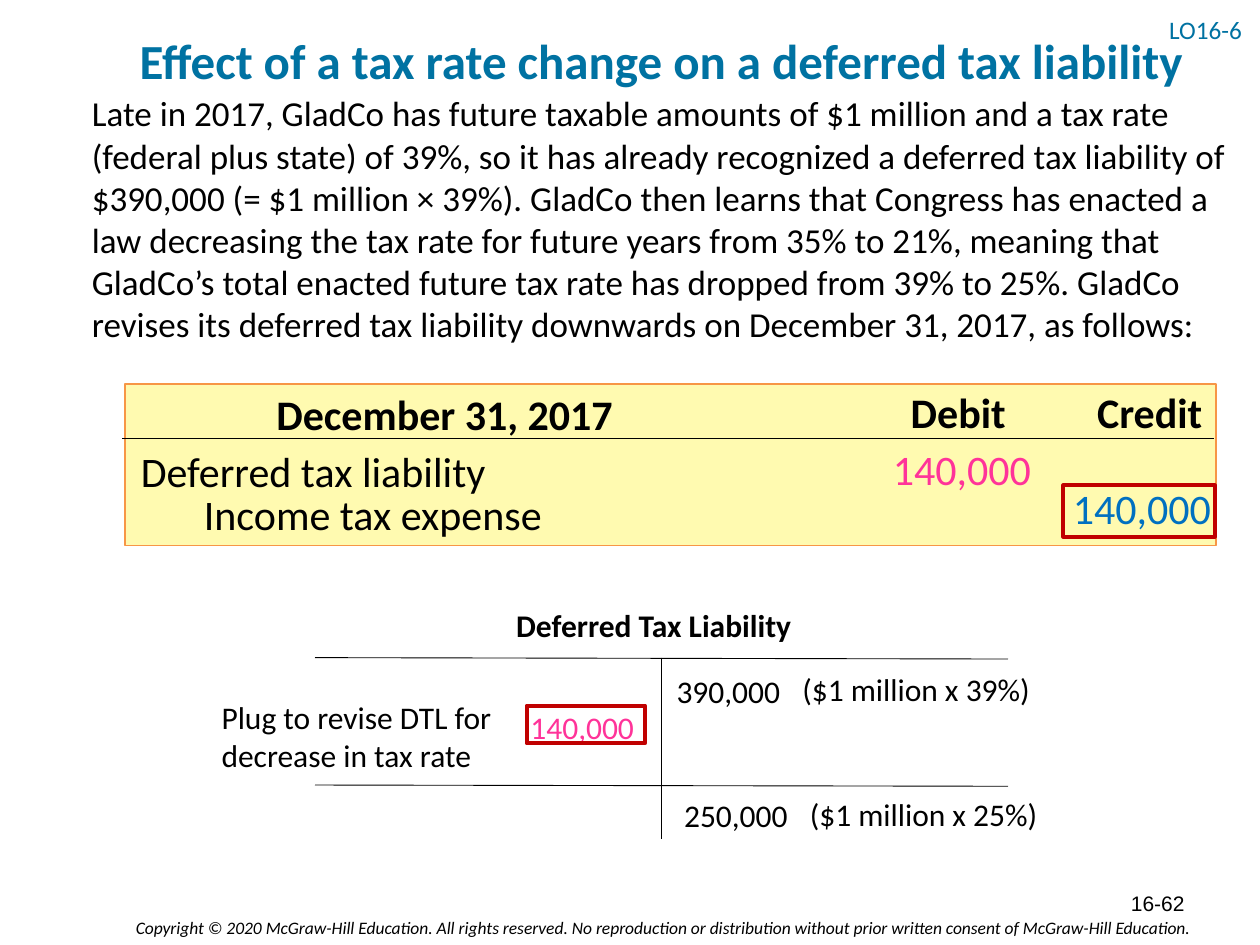
from lxml import etree
from pptx import Presentation
from pptx.dml.color import RGBColor
from pptx.enum.shapes import MSO_CONNECTOR, MSO_SHAPE
from pptx.enum.text import MSO_ANCHOR, PP_ALIGN
from pptx.oxml.ns import qn
from pptx.util import Pt

COLORS = {
    "text": "000000", "heading": "0072A2", "debit": "FF3399", "credit": "0070C0",
    "panel": "FFFAB0", "panel_edge": "F79646", "highlight": "C00000",
}
LEFT, CENTER, RIGHT = PP_ALIGN.LEFT, PP_ALIGN.CENTER, PP_ALIGN.RIGHT
MIDDLE = MSO_ANCHOR.MIDDLE

prs = Presentation()
prs.slide_width, prs.slide_height = Pt(720), Pt(540)
s = prs.slides.add_slide(prs.slide_layouts[6])


def add_text(text, x, y, w, h, size, align=LEFT, color="text", bold=False,
             italic=False, anchor=MSO_ANCHOR.TOP, font="Calibri", spacing=None):
    """Add a one-paragraph text box and return its paragraph."""
    tf = s.shapes.add_textbox(Pt(x), Pt(y), Pt(w), Pt(h)).text_frame
    tf.word_wrap = True
    tf.vertical_anchor = anchor
    p = tf.paragraphs[0]
    p.text = text
    p.alignment = align
    p.line_spacing = spacing
    p.font.name, p.font.size = font, Pt(size)
    p.font.bold, p.font.italic = bold, italic
    p.font.color.rgb = RGBColor.from_string(COLORS[color])
    return p


def add_box(x, y, w, h, edge, width, fill=None):
    box = s.shapes.add_shape(MSO_SHAPE.RECTANGLE, Pt(x), Pt(y), Pt(w), Pt(h))
    box.shadow.inherit = False
    if fill:
        box.fill.solid()
        box.fill.fore_color.rgb = RGBColor.from_string(COLORS[fill])
    else:
        box.fill.background()
    box.line.color.rgb = RGBColor.from_string(COLORS[edge])
    box.line.width = Pt(width)


# Heading and explanation
add_text("Effect of a tax rate change on a deferred tax liability",
         31.7, 7.9, 692, 49, 28, CENTER, "heading", bold=True, anchor=MIDDLE, spacing=1.1)
add_text("LO16-6", 661, 4.3, 58.5, 28.8, 14.4, color="heading", anchor=MIDDLE, spacing=0.7)
add_text("Late in 2017, GladCo has future taxable amounts of $1 million and a tax rate "
         "(federal plus state) of 39%, so it has already recognized a deferred tax "
         "liability of $390,000 (= $1 million × 39%). GladCo then learns that Congress "
         "has enacted a law decreasing the tax rate for future years from 35% to 21%, "
         "meaning that GladCo’s total enacted future tax rate has dropped from 39% to "
         "25%. GladCo revises its deferred tax liability downwards on December 31, 2017, "
         "as follows:", 45.4, 49, 673, 152.6, 20)

# Journal entry
add_box(71.3, 219.6, 623.5, 92.2, "panel_edge", 1, "panel")
for text, x, y, w in [("December 31, 2017", 69.8, 218.2, 368.6),
                      ("Debit", 496.8, 217.4, 101.5),
                      ("Credit", 614.9, 217.4, 84.2)]:
    add_text(text, x, y, w, 36, 24, CENTER, bold=True)
add_text("Deferred tax liability", 73.4, 251.3, 372, 31.7, 24)
p = add_text("Income tax expense", 73.4, 275.8, 372, 31.7, 24)
pPr = p._p.get_or_add_pPr()
pPr.set("marL", str(Pt(36)))
pPr.set("indent", "0")
p.level = 1
add_text("140,000", 488.2, 249.8, 108, 31.7, 24, RIGHT, "debit")
add_text("140,000", 590.4, 272.2, 108.7, 31.7, 24, RIGHT, "credit")

# T-account
add_text("Deferred Tax Liability", 231.8, 342.7, 283.7, 28.8, 18, CENTER, bold=True)
add_text("Plug to revise DTL for decrease in tax rate", 119.5, 395.3, 171.4, 51, 18)
add_text("140,000", 275.8, 401, 93.6, 28.8, 18, RIGHT, "debit", anchor=MIDDLE)
for amount, basis, x, y in [("390,000", "($1 million x 39%)", 373.7, 380.2),
                            ("250,000", "($1 million x 25%)", 378, 451.4)]:
    add_text(amount, x, y, 79.2, 28.8, 18, RIGHT, anchor=MIDDLE)
    add_text(basis, x + 62, y - 0.7, 175.7, 28.8, 18, CENTER)

# Rules of the journal entry and the T-account
for x1, y1, x2, y2 in [(69.8, 250.6, 694, 250.6), (180, 375.8, 576, 376.6),
                       (180, 448.6, 576, 449.3), (378, 375.8, 378, 479.5)]:
    rule = s.shapes.add_connector(MSO_CONNECTOR.STRAIGHT, Pt(x1), Pt(y1), Pt(x2), Pt(y2))
    rule.line.color.rgb = RGBColor.from_string(COLORS["text"])
    rule.line.width = Pt(0.5)
    etree.SubElement(rule._element.spPr, qn("a:effectLst"))

# Frames around the matching amounts
add_box(607.7, 277.2, 86.4, 29.5, "highlight", 2.25)
add_box(301, 403.2, 67.7, 21.6, "highlight", 2.25)

# Footer
add_text("16-62", 516.2, 501.8, 167.8, 28.8, 12, RIGHT, anchor=MIDDLE, font="Arial")
add_text("Copyright © 2020 McGraw-Hill Education. All rights reserved. No reproduction or "
         "distribution without prior written consent of McGraw-Hill Education.",
         32.4, 520.6, 654.5, 19.4, 10, RIGHT, italic=True)

prs.save("out.pptx")
